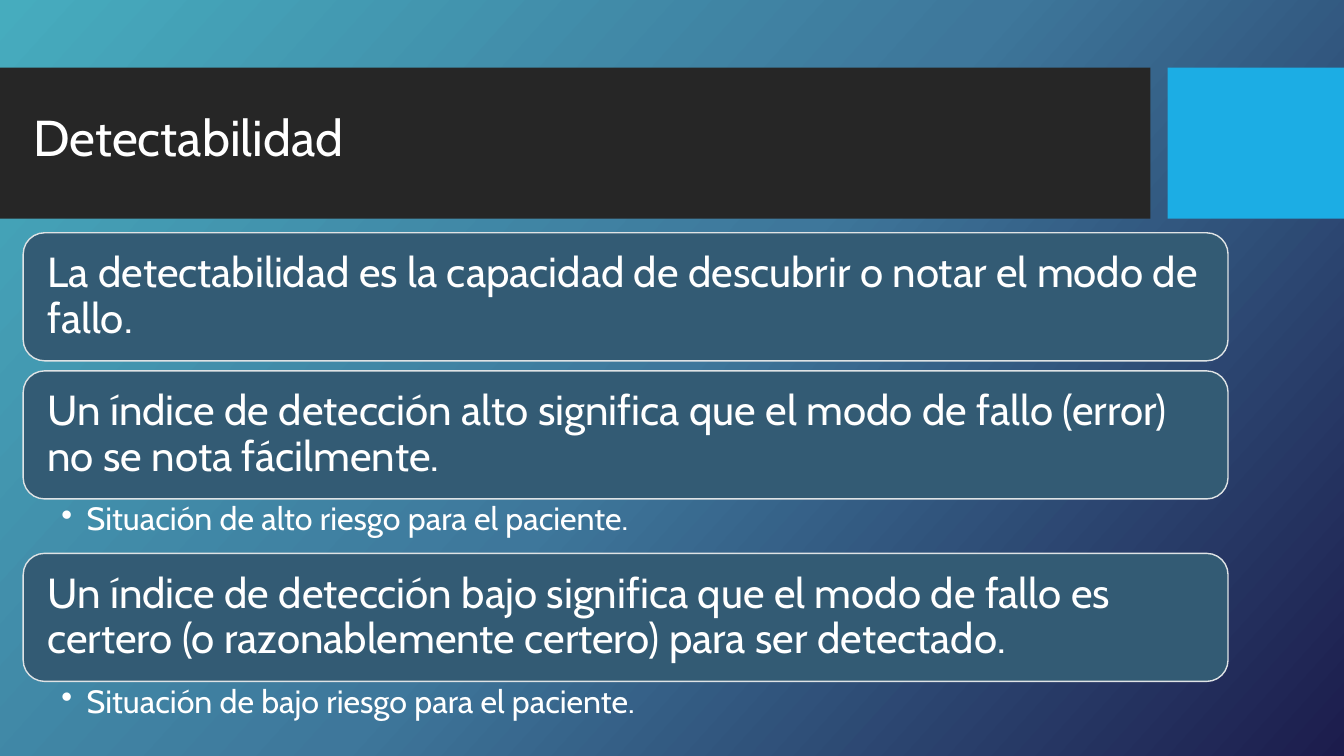
from copy import deepcopy

from pptx import Presentation
from pptx import util as u
from pptx.dml.color import RGBColor
from pptx.enum import shapes, text
from pptx.oxml import ns, xmlchemy

PX = 9144  # EMU per px, 100 px to the inch
FONT = "Cabin"
WHITE = "FFFFFF"
LEFT, WIDTH = 23, 1195
CARD_H, NOTE_H, GAP = 127, 54, 10

# Each card statement with its optional note
STATEMENTS = [
    ("La detectabilidad es la capacidad de descubrir o notar el modo de fallo.", None),
    ("Un índice de detección alto significa que el modo de fallo (error) no se nota fácilmente.",
     "Situación de alto riesgo para el paciente."),
    ("Un índice de detección bajo significa que el modo de fallo es certero "
     "(o razonablemente certero) para ser detectado.",
     "Situación de bajo riesgo para el paciente."),
]


def rgb(value):
    return RGBColor.from_string(value)


def box(*lengths):
    return [n * PX for n in lengths]


def paint_background(s, colours, angle):
    fill = s.background.fill
    fill.gradient()
    fill.gradient_angle = 360 - angle
    stops = s.element.find(".//" + ns.qn("a:gsLst"))
    stops.insert(1, deepcopy(stops[0]))
    for i, (stop, colour) in enumerate(zip(fill.gradient_stops, colours)):
        stop.position = i / (len(colours) - 1)
        stop.color.rgb = rgb(colour)


def add_block(s, kind, place, fill, line=None):
    sp = s.shapes.add_shape(kind, *box(*place))
    sp.shadow.inherit = False
    sp.fill.solid()
    sp.fill.fore_color.rgb = rgb(fill)
    if line:
        sp.line.color.rgb = rgb(line)
        sp.line.width = u.Pt(1)
    else:
        sp.line.fill.background()
    return sp


def set_text(sp, words, size, insets, anchor):
    tf = sp.text_frame
    tf.text = words
    tf.word_wrap = True
    tf.auto_size = text.MSO_AUTO_SIZE.NONE
    tf.vertical_anchor = anchor
    tf.margin_left, tf.margin_top, tf.margin_right, tf.margin_bottom = box(*insets)
    p = tf.paragraphs[0]
    p.alignment = text.PP_ALIGN.LEFT
    p.line_spacing = 0.9
    font = p.runs[0].font
    font.name, font.size = FONT, u.Pt(size)
    font.color.rgb = rgb(WHITE)
    return p


def add_title(s, words):
    title = s.shapes.title
    s.shapes.element.append(title.element)  # in front of the bars
    title.left, title.top, title.width, title.height = box(LEFT, 80, 1051, 118)
    set_text(title, words, 36, (10, 5, 10, 5), text.MSO_ANCHOR.MIDDLE)


def add_card(s, top, words):
    sp = add_block(s, shapes.MSO_SHAPE.ROUNDED_RECTANGLE,
                   (LEFT, top, WIDTH, CARD_H), "335B74", "DFE3E5")
    set_text(sp, words, 30, (18, 18, 18, 18), text.MSO_ANCHOR.MIDDLE)


def add_note(s, top, words):
    sp = s.shapes.add_textbox(*box(LEFT, top, WIDTH, NOTE_H))
    p = set_text(sp, words, 23, (38, 4, 23, 4), text.MSO_ANCHOR.TOP)
    p.level = 1
    pPr = p._p.get_or_add_pPr()
    pPr.set("marL", str(25 * PX))
    pPr.set("indent", str(-25 * PX))
    bullet = xmlchemy.OxmlElement("a:buChar")
    bullet.set("char", "•")
    pPr.append(bullet)


def main():
    prs = Presentation()
    prs.slide_width, prs.slide_height = u.Inches(13.33), u.Inches(7.5)
    s = prs.slides.add_slide(prs.slide_layouts[5])
    paint_background(s, ["46ACBE", "3E779B", "1C1C4C"], 42)

    # Title band
    add_block(s, shapes.MSO_SHAPE.RECTANGLE, (0, 67, 1141, 150), "262626")
    add_block(s, shapes.MSO_SHAPE.RECTANGLE, (1158, 67, 175, 150), "1CADE4")
    add_title(s, "Detectabilidad")

    # Stacked cards; a note takes the place of the gap
    top = 231
    for statement, note in STATEMENTS:
        add_card(s, top, statement)
        top += CARD_H
        if note:
            add_note(s, top, note)
        top += NOTE_H if note else GAP

    prs.save("out.pptx")


if __name__ == "__main__":
    main()
